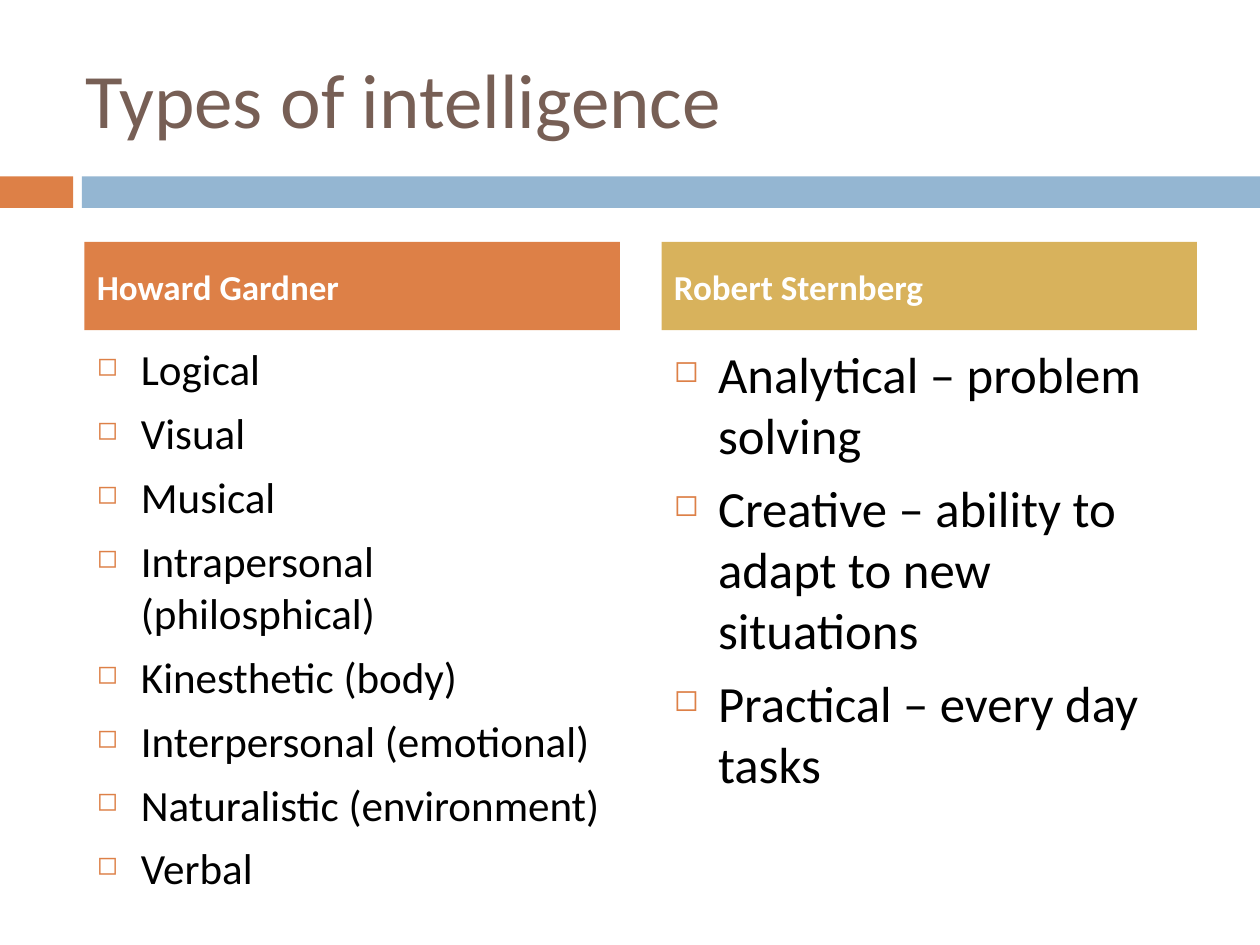
from dataclasses import dataclass

from lxml.etree import SubElement
from pptx import Presentation
from pptx.dml.color import RGBColor as Color
from pptx.enum.shapes import MSO_SHAPE as Shape
from pptx.enum.text import MSO_ANCHOR as Anchor, PP_ALIGN as Align
from pptx.oxml.ns import qn
from pptx.util import Inches, Pt


@dataclass(frozen=True)
class Theme:
    font: str = "Calibri"
    title: str = "775F55"
    orange: str = "DD8047"
    blue: str = "94B6D2"
    gold: str = "D8B25C"
    white: str = "FFFFFF"
    black: str = "000000"
    title_size: float = 44
    header_size: float = 20
    long_list_size: float = 24.6
    short_list_size: float = 29


class SlideBuilder:
    def __init__(self, slide, theme):
        self.slide = slide
        self.theme = theme

    def style(self, para, size, color, bold=False):
        para.alignment = Align.LEFT
        para.font.name = self.theme.font
        para.font.size = Pt(size)
        para.font.bold = bold
        para.font.color.rgb = Color.from_string(color)

    def band(self, left, top, width, height, color):
        shape = self.slide.shapes.add_shape(
            Shape.RECTANGLE, Inches(left), Inches(top), Inches(width), Inches(height))
        shape.shadow.inherit = False
        shape.fill.solid()
        shape.fill.fore_color.rgb = Color.from_string(color)
        shape.line.fill.background()
        return shape

    def header(self, left, top, width, height, text, color):
        frame = self.band(left, top, width, height, color).text_frame
        frame.vertical_anchor = Anchor.MIDDLE
        frame.text = text
        self.style(frame.paragraphs[0], self.theme.header_size, self.theme.white, bold=True)

    def text_frame(self, left, top, width, height):
        box = self.slide.shapes.add_textbox(
            Inches(left), Inches(top), Inches(width), Inches(height))
        box.text_frame.word_wrap = True
        return box.text_frame

    def title(self, left, top, width, height, text):
        frame = self.text_frame(left, top, width, height)
        frame.vertical_anchor = Anchor.MIDDLE
        frame.text = text
        self.style(frame.paragraphs[0], self.theme.title_size, self.theme.title)

    def add_bullet(self, para):
        properties = para._p.get_or_add_pPr()
        properties.set("marL", str(Inches(0.35)))
        properties.set("indent", str(-Inches(0.35)))
        color = SubElement(properties, qn("a:buClr"))
        SubElement(color, qn("a:srgbClr"), val=self.theme.orange)
        SubElement(properties, qn("a:buSzPct"), val="60000")
        SubElement(properties, qn("a:buChar"), char="◻")

    def bullet_list(self, left, top, width, height, items, size):
        frame = self.text_frame(left, top, width, height)
        for index, item in enumerate(items):
            para = frame.add_paragraph() if index else frame.paragraphs[0]
            para.text = item
            self.add_bullet(para)
            if index:
                para.space_before = Pt(7)
            self.style(para, size, self.theme.black)


def main():
    deck = Presentation()
    deck.slide_width, deck.slide_height = Inches(10), Inches(7.5)
    theme = Theme()
    page = SlideBuilder(deck.slides.add_slide(deck.slide_layouts[6]), theme)

    page.band(0, 1.4, 0.58, 0.25, theme.orange)
    page.band(0.65, 1.4, 9.35, 0.25, theme.blue)
    page.title(0.58, 0.3, 8.92, 0.95, "Types of intelligence")

    gardner = ["Logical", "Visual", "Musical", "Intrapersonal (philosphical)",
               "Kinesthetic (body)", "Interpersonal (emotional)",
               "Naturalistic (environment)", "Verbal"]
    sternberg = ["Analytical – problem solving",
                 "Creative – ability to adapt to new situations",
                 "Practical – every day tasks"]
    columns = [
        (0.67, "Howard Gardner", theme.orange, gardner, theme.long_list_size),
        (5.25, "Robert Sternberg", theme.gold, sternberg, theme.short_list_size),
    ]
    for left, name, color, items, size in columns:
        page.bullet_list(left, 2.67, 4.25, 3.92, items, size)
        page.header(left, 1.92, 4.25, 0.7, name, color)

    deck.save("out.pptx")


if __name__ == "__main__":
    main()
